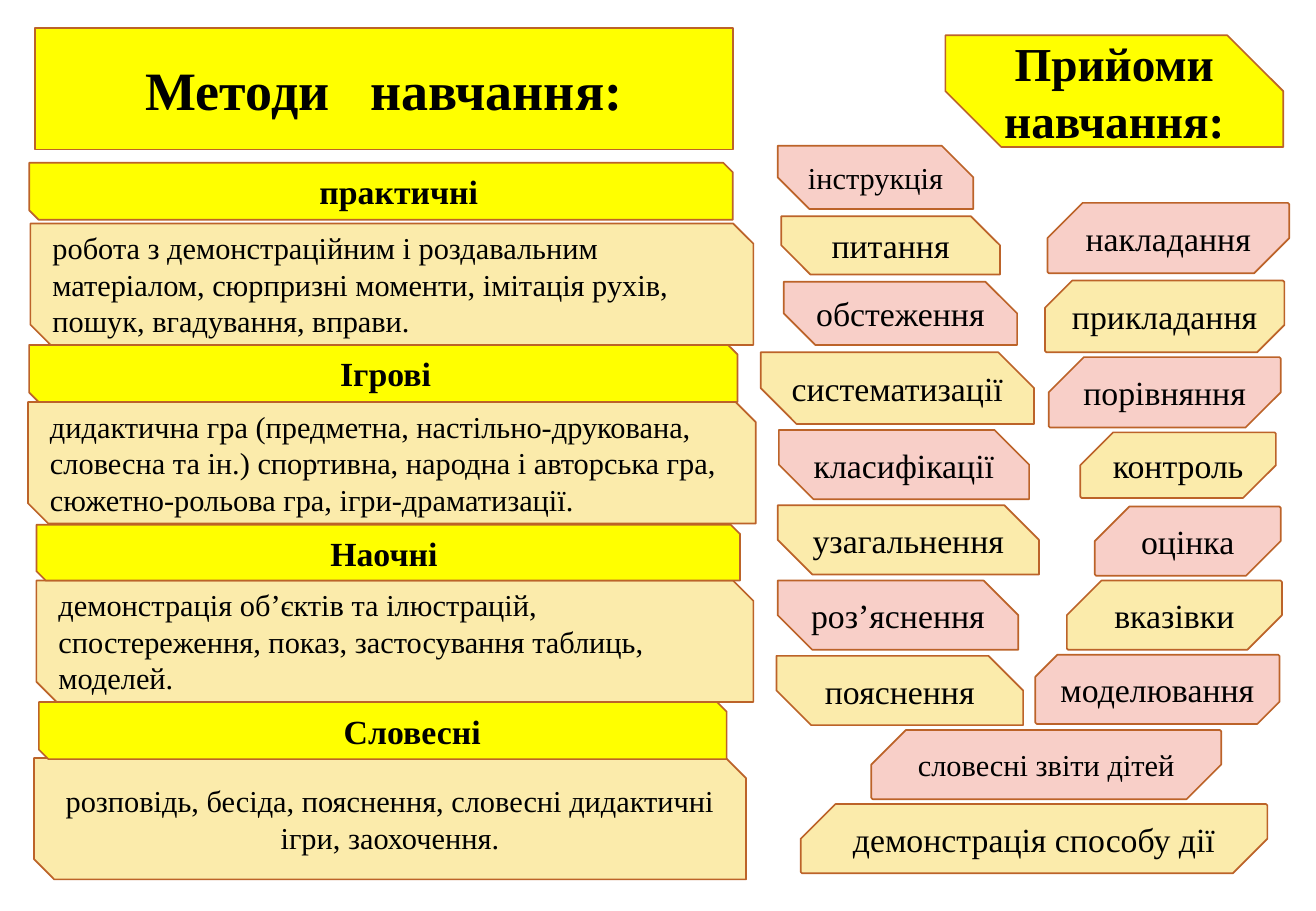
"""Build a slide that lists teaching methods and teaching techniques."""
from pptx import Presentation
from pptx.dml.color import RGBColor
from pptx.enum.shapes import MSO_SHAPE
from pptx.enum.text import MSO_ANCHOR, MSO_AUTO_SIZE, PP_ALIGN
from pptx.oxml import parse_xml
from pptx.oxml.ns import nsdecls
from pptx.util import Inches, Pt

COLORS = {"yellow": "FFFF00", "cream": "FBEBAB", "pink": "F8CFC8",
          "outline": "BC6329", "text": "000000"}
SNIP = 0.16667


def format_shape(shape, lines, color, size, bold=False, align=PP_ALIGN.CENTER, margins=(0.1, 0.1)):
    shape.fill.solid()
    shape.fill.fore_color.rgb = RGBColor.from_string(COLORS[color])
    shape.line.color.rgb = RGBColor.from_string(COLORS["outline"])
    shape.line.width = Pt(1)
    frame = shape.text_frame
    frame_format = {"word_wrap": True, "auto_size": MSO_AUTO_SIZE.NONE,
                    "vertical_anchor": MSO_ANCHOR.MIDDLE,
                    "margin_left": Inches(margins[0]), "margin_right": Inches(margins[1])}
    for name, value in frame_format.items():
        setattr(frame, name, value)
    font_format = {"name": "Times New Roman", "size": Pt(size), "bold": bold}
    for index, line in enumerate(lines):
        paragraph = frame.paragraphs[0] if index == 0 else frame.add_paragraph()
        paragraph.alignment = align
        for text in line:
            run = paragraph.add_run()
            run.text = text
            for name, value in font_format.items():
                setattr(run.font, name, value)
            run.font.color.rgb = RGBColor.from_string(COLORS["text"])


def add_snipped(box, snips, text, color, size, **options):
    shape = slide.shapes.add_shape(MSO_SHAPE.SNIP_2_DIAG_RECTANGLE, *map(Inches, box))
    shape.shadow.inherit = False
    shape.adjustments[0], shape.adjustments[1] = snips
    format_shape(shape, [[line] for line in text.split("\n")], color, size, **options)


presentation = Presentation()
presentation.slide_width = Inches(10.83)
presentation.slide_height = Inches(7.5)
slide = presentation.slides.add_slide(presentation.slide_layouts[5])

title = slide.shapes.title
title_place = {"left": 0.29, "top": 0.23, "width": 5.74, "height": 1}
for name, value in title_place.items():
    setattr(title, name, Inches(value))
title.element.spPr.append(parse_xml(
    f'<a:prstGeom {nsdecls("a")} prst="snip2DiagRect"><a:avLst>'
    '<a:gd name="adj1" fmla="val 0"/><a:gd name="adj2" fmla="val 31600"/>'
    '</a:avLst></a:prstGeom>'))
format_shape(title, [["Методи", " ", "навчання:"]], "yellow", 32, bold=True)
title_gap = title.text_frame.paragraphs[0].runs[1]
title_gap.font._element.set("spc", "1600")

methods = [
    ("практичні", (0.24, 1.34, 5.79, 0.47), 2.63,
     "робота з демонстраційним і роздавальним матеріалом, сюрпризні моменти, "
     "імітація рухів, пошук, вгадування, вправи.",
     (0.25, 1.84, 5.95, 1), PP_ALIGN.LEFT),
    ("Ігрові", (0.24, 2.84, 5.83, 0.47), 2.8,
     "дидактична гра (предметна, настільно-друкована, словесна та ін.) спортивна, "
     "народна і авторська гра, сюжетно-рольова гра, ігри-драматизації.",
     (0.23, 3.31, 5.99, 1), PP_ALIGN.LEFT),
    ("Наочні", (0.3, 4.32, 5.79, 0.46), 2.72,
     "демонстрація об’єктів та ілюстрацій, спостереження, показ, "
     "застосування таблиць, моделей.",
     (0.3, 4.78, 5.9, 1), PP_ALIGN.LEFT),
    ("Словесні", (0.32, 5.78, 5.66, 0.47), 2.83,
     "розповідь, бесіда, пояснення, словесні дидактичні ігри, заохочення.",
     (0.28, 6.24, 5.86, 1), PP_ALIGN.CENTER),
]
for heading, heading_box, text_left, details, details_box, align in methods:
    add_snipped(details_box, (0, SNIP), details, "cream", 18, align=align)
    indent = text_left - heading_box[0] - 0.04
    add_snipped(heading_box, (0, SNIP), heading, "yellow", 20, bold=True,
                align=PP_ALIGN.LEFT, margins=(indent, 0.1))

left_column = [
    ("інструкція", (6.4, 1.2, 1.61, 0.52), 0.5, 18),
    ("питання", (6.43, 1.78, 1.8, 0.48), 0.5, 20),
    ("обстеження", (6.45, 2.32, 1.92, 0.52), 0.5, 20),
    ("систематизації", (6.26, 2.9, 2.25, 0.59), 0.5, 20),
    ("класифікації", (6.41, 3.54, 2.06, 0.57), 0.5, 20),
    ("узагальнення", (6.4, 4.16, 2.15, 0.57), 0.5, 20),
    ("роз’яснення", (6.4, 4.78, 1.98, 0.57), 0.5, 20),
    ("пояснення", (6.39, 5.4, 2.03, 0.57), 0.5, 20),
]
right_column = [
    ("накладання", (8.62, 1.67, 1.99, 0.58), 0.5, 20),
    ("прикладання", (8.6, 2.31, 1.97, 0.59), 0.38, 20),
    ("порівняння", (8.63, 2.94, 1.91, 0.58), 0.5, 20),
    ("контроль", (8.89, 3.56, 1.61, 0.54), 0.5, 20),
    ("оцінка", (9.01, 4.17, 1.53, 0.57), 0.5, 20),
    ("вказівки", (8.78, 4.78, 1.77, 0.57), 0.5, 20),
    ("моделювання", (8.52, 5.39, 2.01, 0.57), 0.32, 20),
]
bottom_rows = [
    ("словесні звіти дітей", (7.17, 6.01, 2.88, 0.57), 0.5, 18),
    ("демонстрація способу дії", (6.59, 6.62, 3.84, 0.57), 0.5, 20),
]
for techniques in (left_column, right_column, bottom_rows):
    for index, (technique, box, snip, size) in enumerate(techniques):
        snips = (0, snip) if techniques is left_column else (snip, 0.02)
        color = ("pink", "cream")[index % 2]
        add_snipped(box, snips, technique, color, size, margins=(0.05, 0.05))

add_snipped((7.78, 0.29, 2.78, 0.92), (0, 0.5), "Прийоми\nнавчання:", "yellow", 28, bold=True)

presentation.save("out.pptx")
